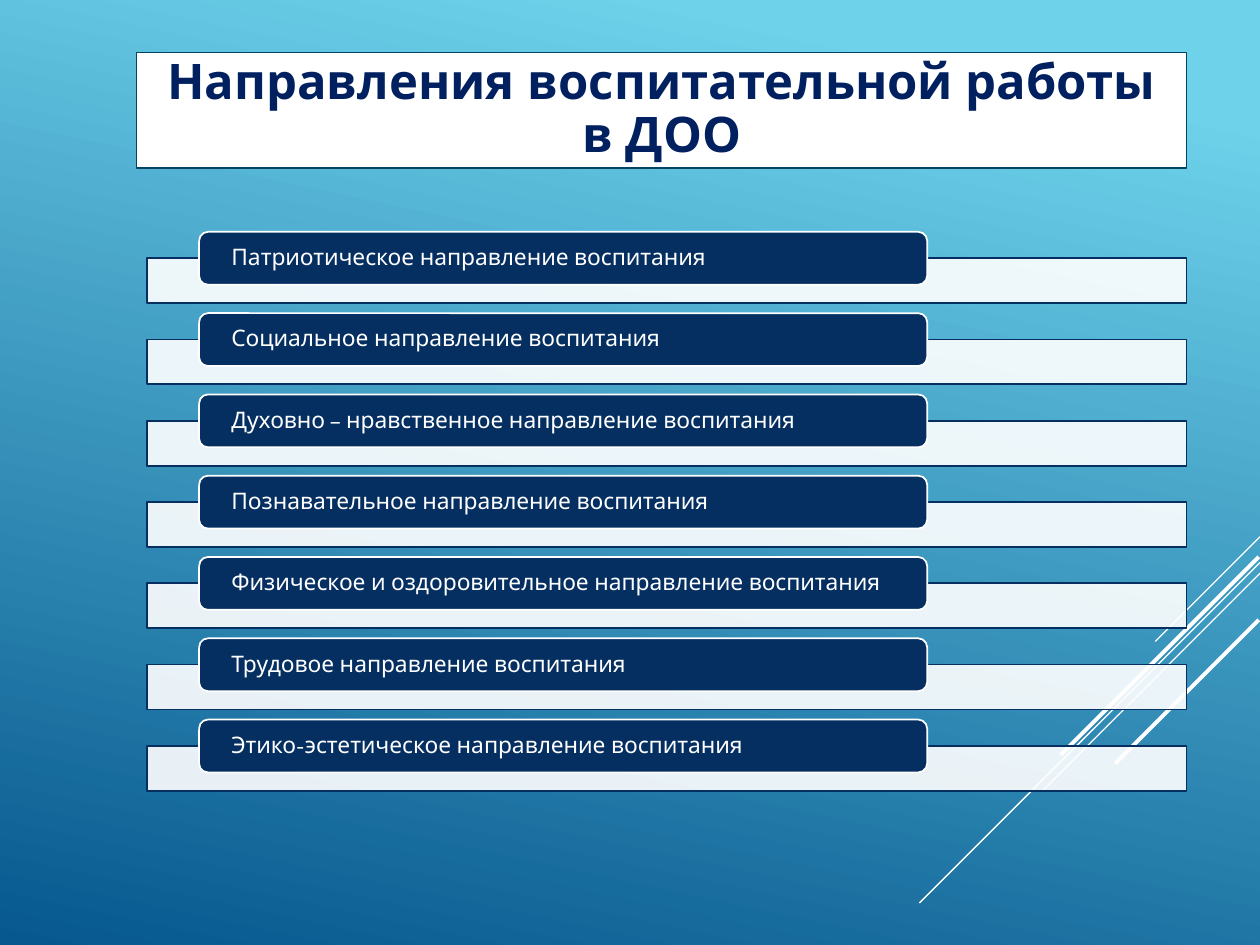
"""Build the slide listing the directions of educational work."""
from lxml import etree
from pptx import Presentation
from pptx.dml.color import RGBColor
from pptx.enum.shapes import MSO_CONNECTOR as CONN, MSO_SHAPE as SHAPE
from pptx.enum.text import MSO_ANCHOR as ANCHOR, MSO_AUTO_SIZE as AUTO, PP_ALIGN as ALIGN
from pptx.oxml.ns import qn
from pptx.util import Pt

WHITE = RGBColor(0xFF, 0xFF, 0xFF)
NAVY = RGBColor(0x05, 0x2F, 0x61)
TITLE_BLUE = RGBColor(0x00, 0x20, 0x60)
TITLE_EDGE = RGBColor(0x05, 0x43, 0x61)
SKY = RGBColor(0x6E, 0xD2, 0xEB)
DEEP = RGBColor(0x06, 0x58, 0x8E)
FONT = "League Spartan"
DIRECTIONS = [
    "Патриотическое направление воспитания",
    "Социальное направление воспитания",
    "Духовно – нравственное направление воспитания",
    "Познавательное направление воспитания",
    "Физическое и оздоровительное направление воспитания",
    "Трудовое направление воспитания",
    "Этико-эстетическое направление воспитания",
]
RAYS = [
    (720, 306.7, 660.2, 366.5, 0.75),
    (720, 321.4, 525.4, 516, 0.75),
    (720, 327.6, 596.2, 451.4, 0.75),
    (719.3, 318.2, 606.2, 431.3, 2.25),
    (719.3, 354.2, 637.2, 436.3, 2.25),
]
ROW_TOP, ROW_STEP = 132.5, 46.45


def paint(sp, fill, line):
    sp.fill.solid()
    sp.fill.fore_color.rgb = fill
    sp.line.color.rgb = line
    sp.line.width = Pt(1)


def style_text(tf, size, color, align, bold=False):
    tf.word_wrap = True
    tf.auto_size = AUTO.NONE
    tf.vertical_anchor = ANCHOR.MIDDLE
    p = tf.paragraphs[0]
    p.alignment = align
    p.line_spacing = 0.9
    font = p.runs[0].font
    font.name, font.size, font.bold = FONT, Pt(size), bold
    font.color.rgb = color


prs = Presentation()
prs.slide_width, prs.slide_height = Pt(720), Pt(540)
s = prs.slides.add_slide(prs.slide_layouts[5])

bg = s.background.fill
bg.gradient()
bg.gradient_angle = 258
for stop, position, color in zip(bg.gradient_stops, (0.1, 1), (SKY, DEEP)):
    stop.position = position
    stop.color.rgb = color

for x1, y1, x2, y2, width in RAYS:
    ray = s.shapes.add_connector(CONN.STRAIGHT, Pt(x1), Pt(y1), Pt(x2), Pt(y2))
    ray.line.color.rgb = WHITE
    ray.line.width = Pt(width)
    etree.SubElement(ray._element.spPr, qn("a:effectLst"))

title = s.shapes.title
title.left, title.top, title.width, title.height = Pt(78), Pt(30), Pt(600), Pt(66)
paint(title, WHITE, TITLE_EDGE)
title.text_frame.text = "Направления воспитательной работы в ДОО"
style_text(title.text_frame, 28, TITLE_BLUE, ALIGN.CENTER, bold=True)

for i, direction in enumerate(DIRECTIONS):
    top = ROW_TOP + i * ROW_STEP
    bar = s.shapes.add_shape(SHAPE.RECTANGLE, Pt(84), Pt(top + 15), Pt(594), Pt(25.7))
    bar.shadow.inherit = False
    paint(bar, WHITE, NAVY)
    color = bar._element.spPr.find(qn("a:solidFill"))[0]
    etree.SubElement(color, qn("a:alpha"), val="90000")

    pill = s.shapes.add_shape(SHAPE.ROUNDED_RECTANGLE, Pt(113.8), Pt(top), Pt(416), Pt(30.2))
    pill.shadow.inherit = False
    paint(pill, NAVY, WHITE)
    tf = pill.text_frame
    tf.text = direction
    tf.margin_left = tf.margin_right = Pt(17)
    tf.margin_top = tf.margin_bottom = 0
    style_text(tf, 13, WHITE, ALIGN.LEFT)

prs.save("out.pptx")
